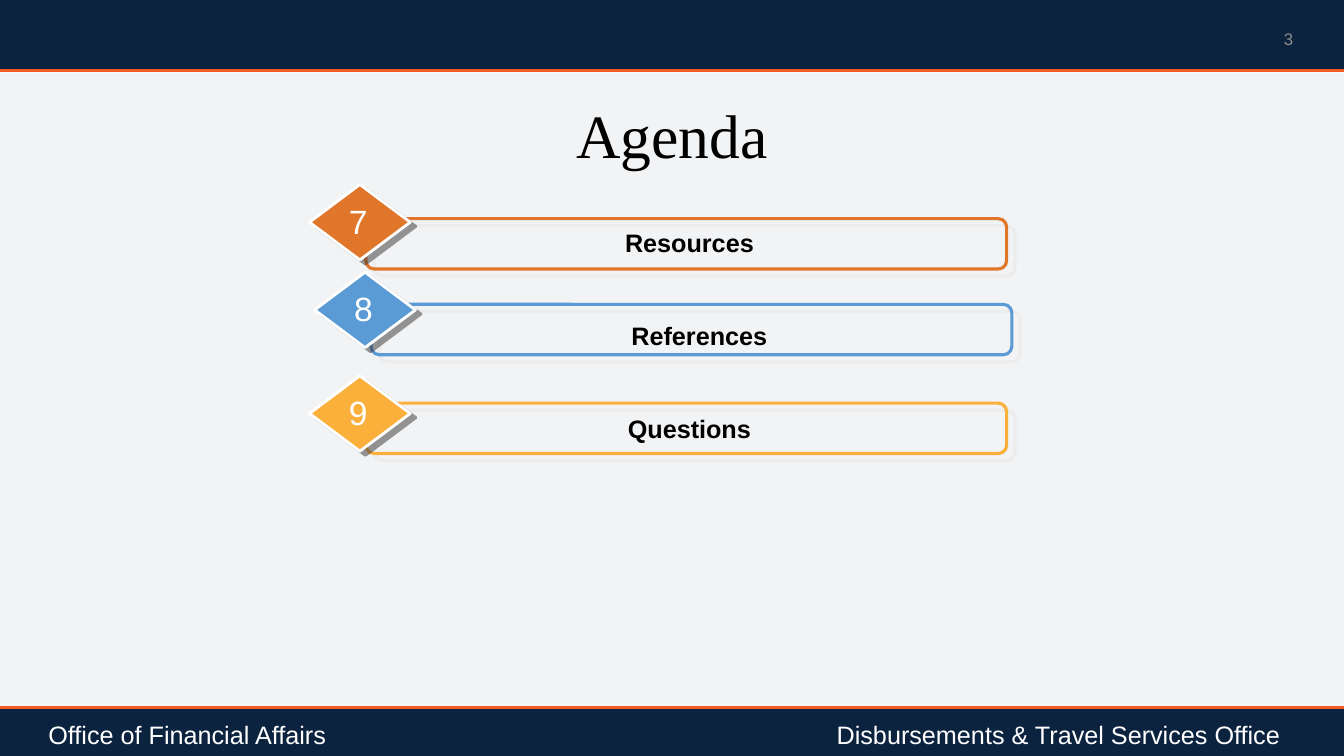
from lxml.etree import SubElement
from pptx import Presentation
from pptx.dml.color import RGBColor
from pptx.enum.shapes import MSO_CONNECTOR, MSO_SHAPE
from pptx.enum.text import MSO_ANCHOR, PP_ALIGN, MSO_AUTO_SIZE
from pptx.oxml.ns import qn
from pptx.util import Cm, Pt

WIDE, HIGH = 33.87, 19.05
NAVY, FLAME, WHITE, BLACK = "0C2340", "F15A22", "FFFFFF", "000000"

TITLE = "Agenda"
PAGE = "3"
FOOTER = "Office of Financial Affairs\tDisbursements & Travel Services Office"
FOOT_TAB = 31.04

# number, label, colour, bar left, bar top, diamond top, label top, label shift
ROWS = [
    ("7", "Resources", "E0762A", 9.22, 5.51, 4.65, 5.61, 0.08),
    ("8", "References", "5B9BD5", 9.35, 7.67, 6.86, 7.95, 0.2),
    ("9", "Questions", "FBB03C", 9.22, 10.16, 9.47, 10.29, 0.08),
]
BAR = (16.15, 1.27)
GEM = (2.54, 1.9)
GEM_SHIFT = -1.42

# top, height, opacity in percent
BANDS = [(1.83, 15.98, 5), (17.86, 1.19, 100), (0, 1.75, 100)]
RULES = [1.78, 17.83]

# colour, distance in points, angle in degrees
BAR_SHADE = ("E7E6E6", 7.8, 40)
GEM_SHADE = ("333333", 5, 37)

FORMATS = {
    "title": {"name": "Times New Roman", "size": Pt(44), "color": BLACK},
    "page": {"name": "Arial", "size": Pt(12), "color": "8C8C8C"},
    "label": {"name": "Arial", "size": Pt(18), "color": BLACK, "bold": True},
    "number": {"name": "Arial", "size": Pt(24), "color": WHITE},
    "footer": {"name": "Arial", "size": Pt(18), "color": WHITE},
}


def paint(target, color):
    """Give a fill or font a solid colour from a hex string."""
    if hasattr(target, "solid"):
        target.solid()
        target.fore_color.rgb = RGBColor.from_string(color)
    else:
        target.color.rgb = RGBColor.from_string(color)


def add_alpha(parent, percent):
    SubElement(parent, qn("a:alpha"), val=str(percent * 1000))


def add_shade(shape, color, dist, angle):
    """Add a half-clear outer shadow without blur."""
    effects = shape._element.spPr.find(qn("a:effectLst"))
    outer = SubElement(effects, qn("a:outerShdw"), blurRad="0",
                       dist=str(Pt(dist)), dir=str(angle * 60000),
                       algn="ctr", rotWithShape="0")
    add_alpha(SubElement(outer, qn("a:srgbClr"), val=color), 50)


def add_form(shapes, kind, box, fill=None, line=None, weight=0, shade=None):
    shape = shapes.add_shape(kind, *map(Cm, box))
    shape.shadow.inherit = False
    if fill:
        paint(shape.fill, fill)
    else:
        shape.fill.background()
    if line:
        paint(shape.line.fill, line)
        shape.line.width = Pt(weight)
    else:
        shape.line.fill.background()
    if shade:
        add_shade(shape, *shade)
    return shape


def add_text(shapes, box, text, style, align=PP_ALIGN.CENTER,
             anchor=MSO_ANCHOR.TOP, wrap=True, tab=None):
    frame = shapes.add_textbox(*map(Cm, box)).text_frame
    frame.word_wrap = wrap
    frame.auto_size = MSO_AUTO_SIZE.NONE
    frame.vertical_anchor = anchor
    para = frame.paragraphs[0]
    para.text = text
    para.alignment = align
    if tab:
        stops = SubElement(para._p.get_or_add_pPr(), qn("a:tabLst"))
        SubElement(stops, qn("a:tab"), pos=str(Cm(tab)), algn="r")
    font = para.runs[0].font
    for key, value in FORMATS[style].items():
        if key == "color":
            paint(font, value)
        else:
            setattr(font, key, value)
    return para


def add_row(shapes, number, label, color, left, top, gem_top, text_top, shift):
    group = shapes.add_group_shape().shapes
    add_form(group, MSO_SHAPE.ROUNDED_RECTANGLE, (left, top, *BAR),
             line=color, weight=2.25, shade=BAR_SHADE)
    gem_left = left + GEM_SHIFT
    add_form(group, MSO_SHAPE.DIAMOND, (gem_left, gem_top, *GEM),
             color, WHITE, 2, GEM_SHADE)
    add_text(group, (left + shift, text_top, BAR[0], 1.02), label, "label")
    add_text(group, (gem_left + 0.73, gem_top + 0.28, 1, 1.3), number,
             "number", wrap=False)


def main():
    deck = Presentation()
    deck.slide_width, deck.slide_height = Cm(WIDE), Cm(HIGH)
    shapes = deck.slides.add_slide(deck.slide_layouts[6]).shapes

    for top, height, percent in BANDS:
        band = add_form(shapes, MSO_SHAPE.RECTANGLE,
                        (0, top, WIDE, height), NAVY)
        if percent < 100:
            fill = band._element.spPr.find(qn("a:solidFill"))
            add_alpha(fill[0], percent)
    for top in RULES:
        rule = shapes.add_connector(MSO_CONNECTOR.STRAIGHT,
                                    Cm(0), Cm(top), Cm(WIDE), Cm(top))
        paint(rule.line.fill, FLAME)
        rule.line.width = Pt(2)
        SubElement(rule._element.spPr, qn("a:effectLst"))

    title = add_text(shapes, (5.51, 2.54, 22.86, 1.7), TITLE, "title")
    title.line_spacing = 0.9
    add_text(shapes, (25.22, 0.48, 7.62, 1.02), PAGE, "page",
             PP_ALIGN.RIGHT, MSO_ANCHOR.MIDDLE)
    for row in ROWS:
        add_row(shapes, *row)
    add_text(shapes, (0.97, 18.01, 31.93, 1.04), FOOTER, "footer",
             PP_ALIGN.LEFT, tab=FOOT_TAB)

    deck.save("out.pptx")


if __name__ == "__main__":
    main()
